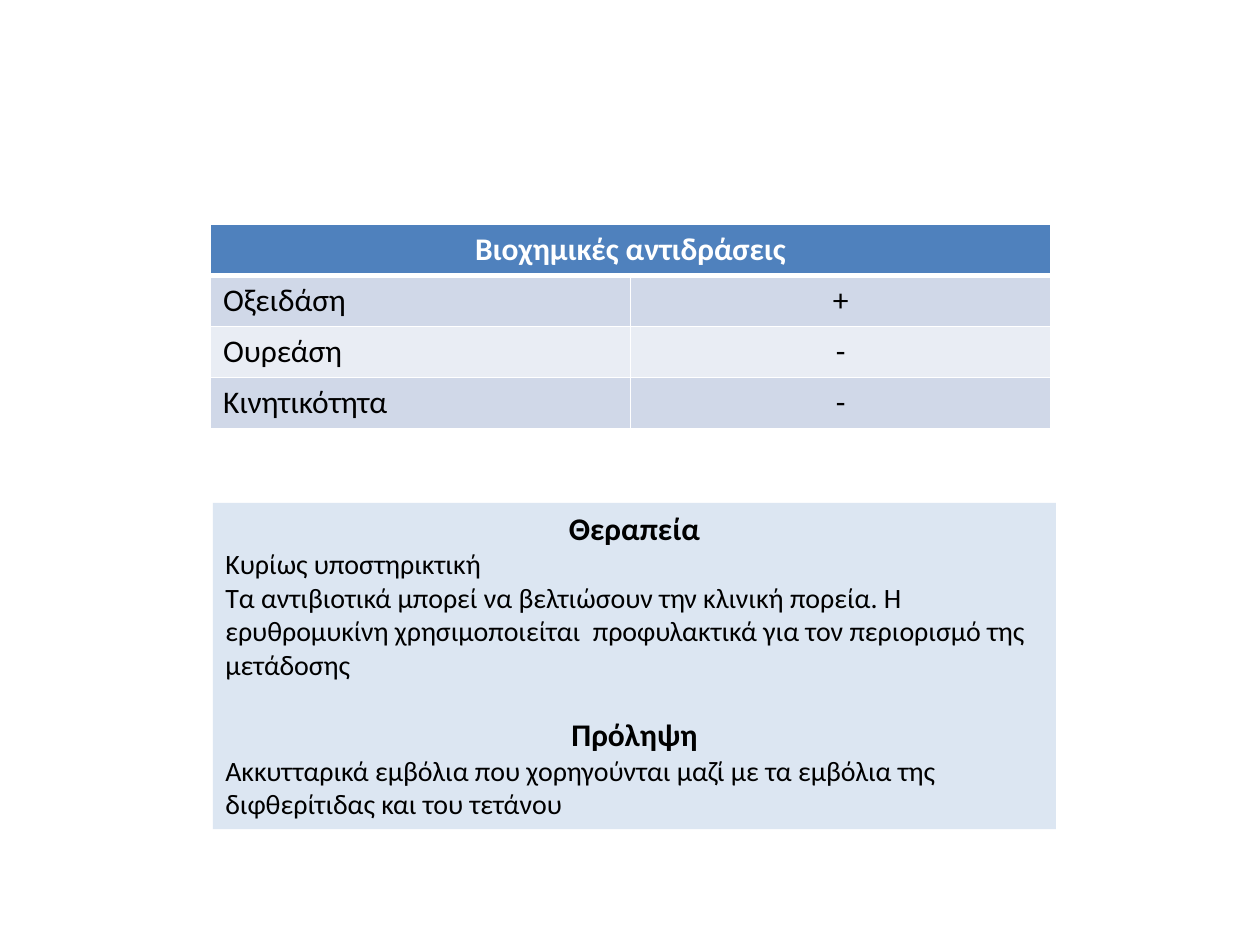
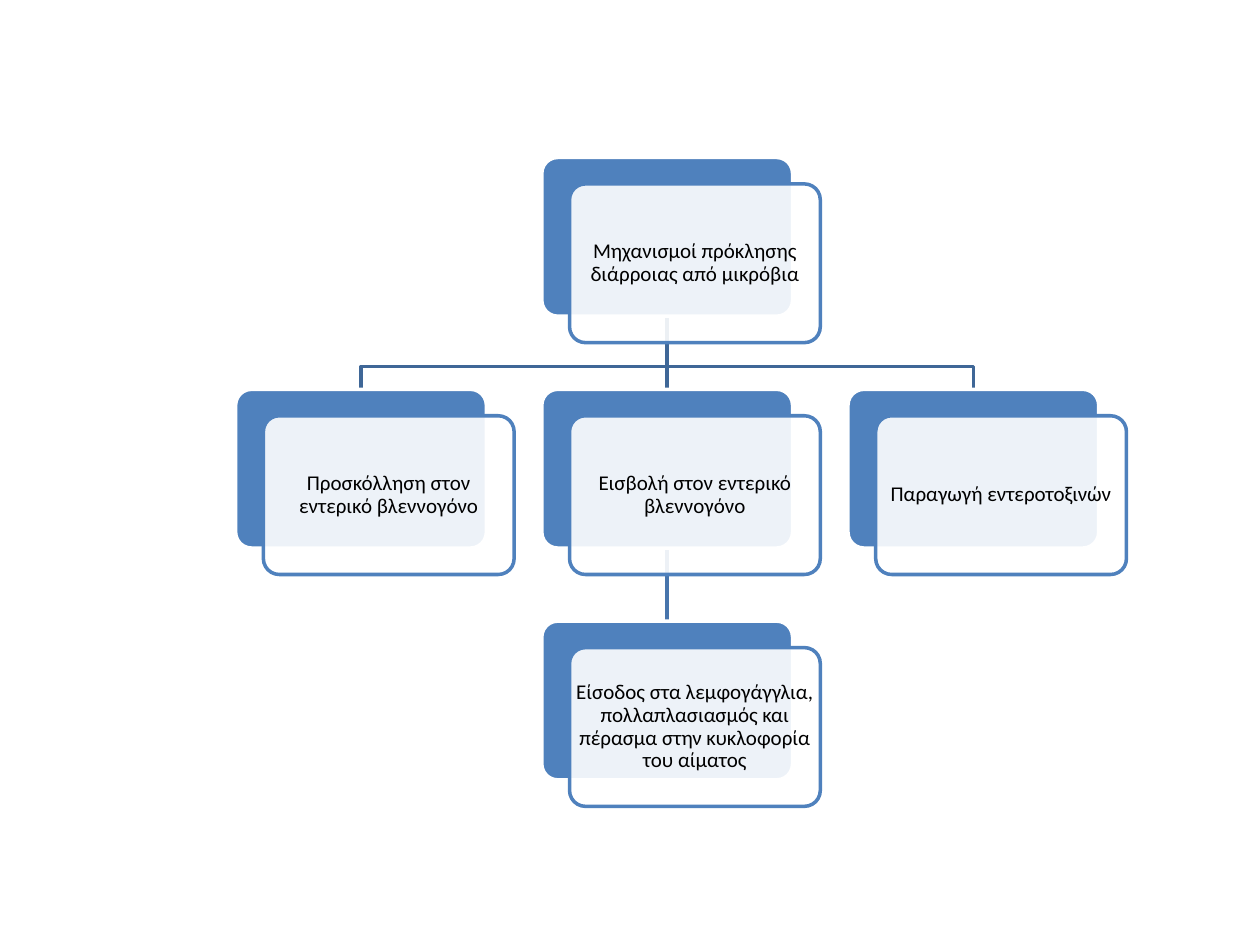
import pptx
import pptx.util
import pptx.dml.color
import pptx.enum.shapes
import pptx.enum.text
import pptx.oxml
import pptx.oxml.ns

Inches, Pt = pptx.util.Inches, pptx.util.Pt
RGB = pptx.dml.color.RGBColor.from_string
ALIGN = pptx.enum.text.PP_ALIGN
KIND = pptx.enum.shapes.MSO_SHAPE
NS = pptx.oxml.ns.nsdecls("a")

TESTS = {
    "title": "Βιοχημικές αντιδράσεις",
    "rows": [("Οξειδάση", "+"), ("Ουρεάση", "-"), ("Κινητικότητα", "-")],
}
CARE = [
    ("Θεραπεία", [
        "Κυρίως υποστηρικτική",
        "Τα αντιβιοτικά μπορεί να βελτιώσουν την κλινική πορεία. Η ερυθρομυκίνη "
        "χρησιμοποιείται  προφυλακτικά για τον περιορισμό της μετάδοσης",
    ]),
    ("Πρόληψη", [
        "Ακκυτταρικά εμβόλια που χορηγούνται μαζί με τα εμβόλια της "
        "διφθερίτιδας και του τετάνου",
    ]),
]
# name: (column, row, parent, text)
NODES = {
    "cause": (1, 0, None, "Μηχανισμοί πρόκλησης διάρροιας από μικρόβια"),
    "stick": (0, 1, "cause", "Προσκόλληση στον εντερικό βλεννογόνο"),
    "invade": (1, 1, "cause", "Εισβολή στον εντερικό βλεννογόνο"),
    "spread": (1, 2, "invade", "Είσοδος στα λεμφογάγγλια, πολλαπλασιασμός και "
                               "πέρασμα στην κυκλοφορία του αίματος"),
    "toxin": (2, 1, "cause", "Παραγωγή εντεροτοξινών"),
}


class Theme:
    font = "Calibri"
    head, body, label = 18, 16, 12
    ink, paper, blue = "000000", "FFFFFF", "4F81BD"
    bands = ("D0D8E8", "E9EDF4")
    panel = "DCE6F2"
    links = ("3F6797", "4875AC")  # by the parent's row
    stroke = 2


class Tree:
    left, top = 1.87, 1.25
    step_x, step_y = 2.43, 1.84
    wide, high = 1.99, 1.26
    shift_x, shift_y = 0.22, 0.21
    bend = 0.69  # share of the gap above the turn


def write(para, text, size, color=Theme.ink, bold=False, align=ALIGN.LEFT):
    para.text, para.alignment = text, align
    font = para.font
    font.name, font.size, font.bold = Theme.font, Pt(size), bold
    font.color.rgb = RGB(color)


def paint(part, color):
    part.fill.solid()
    part.fill.fore_color.rgb = RGB(color)


def edge(cell, low):
    """White cell borders; low is the width of the bottom one in points."""
    props = cell._tc.get_or_add_tcPr()
    for side, width in (("L", 1), ("R", 1), ("T", 1), ("B", low)):
        props.append(pptx.oxml.parse_xml(
            f'<a:ln{side} {NS} w="{Pt(width)}"><a:solidFill>'
            f'<a:srgbClr val="{Theme.paper}"/></a:solidFill></a:ln{side}>'))


def add_tests(slide):
    rows = [(TESTS["title"], "")] + TESTS["rows"]
    frame = slide.shapes.add_table(
        len(rows), 2, Inches(1.67), Inches(1.78), Inches(6.67), Inches(1.62))
    table = frame.table
    for r, row in enumerate(rows):
        for c, text in enumerate(row):
            cell = table.cell(r, c)
            edge(cell, 1 if r else 3)
            paint(cell, Theme.bands[(r - 1) % 2] if r else Theme.blue)
            write(cell.text_frame.paragraphs[0], text, Theme.head,
                  Theme.ink if r else Theme.paper, not r,
                  ALIGN.LEFT if r and not c else ALIGN.CENTER)
    table.cell(0, 0).merge(table.cell(0, 1))


def add_care(slide):
    box = slide.shapes.add_textbox(
        Inches(1.69), Inches(3.99), Inches(6.69), Inches(2.59))
    paint(box, Theme.panel)
    frame = box.text_frame
    frame.word_wrap = True
    for i, (head, lines) in enumerate(CARE):
        para = frame.add_paragraph() if i else frame.paragraphs[0]
        write(para, head, Theme.head, bold=True, align=ALIGN.CENTER)
        if i:
            para.space_before = Pt(19.5)
        for line in lines:
            write(frame.add_paragraph(), line, Theme.body)


def place(col, row):
    return Tree.left + col * Tree.step_x, Tree.top + row * Tree.step_y


def add_card(slide, x, y, fill, line):
    card = slide.shapes.add_shape(
        KIND.ROUNDED_RECTANGLE, Inches(x), Inches(y),
        Inches(Tree.wide), Inches(Tree.high))
    card.adjustments[0] = 0.1
    card.shadow.inherit = False
    paint(card, fill)
    card.line.color.rgb = RGB(line)
    card.line.width = Pt(Theme.stroke)
    return card


def add_node(slide, col, row, text):
    """Draw a blue card with a see-through label card; return the blue one."""
    x, y = place(col, row)
    back = add_card(slide, x, y, Theme.blue, Theme.paper)
    front = add_card(slide, x + Tree.shift_x, y + Tree.shift_y,
                     Theme.paper, Theme.blue)
    color = front.fill._xPr.find(".//" + pptx.oxml.ns.qn("a:srgbClr"))
    color.append(pptx.oxml.parse_xml(f'<a:alpha {NS} val="90000"/>'))
    frame = front.text_frame
    frame.word_wrap = True
    frame.vertical_anchor = pptx.enum.text.MSO_ANCHOR.MIDDLE
    frame.margin_left = frame.margin_right = Inches(0.01)
    frame.margin_top = frame.margin_bottom = Inches(0.01)
    para = frame.paragraphs[0]
    write(para, text, Theme.label, align=ALIGN.CENTER)
    para.line_spacing = 0.9
    return back


def add_link(slide, upper, lower, color):
    """Join two cards behind all others, with a bend if they are not in line."""
    x1, y1 = upper.left + upper.width // 2, upper.top + upper.height
    x2, y2 = lower.left + lower.width // 2, lower.top
    if x1 == x2:
        link = slide.shapes.add_connector(
            pptx.enum.shapes.MSO_CONNECTOR.STRAIGHT, x1, y1, x2, y2)
        link.begin_connect(upper, 2)
        link.end_connect(lower, 0)
        link.element.spPr.append(pptx.oxml.parse_xml(f"<a:effectLst {NS}/>"))
    else:
        turn = y1 + round((y2 - y1) * Tree.bend)
        path = slide.shapes.build_freeform(x1, y1)
        path.add_line_segments([(x1, turn), (x2, turn), (x2, y2)], close=False)
        link = path.convert_to_shape()
        link.fill.background()
        link.shadow.inherit = False
    link.line.color.rgb = RGB(color)
    link.line.width = Pt(Theme.stroke)
    slide.shapes.element.insert(2, link.element)


def add_tree(slide):
    cards = {name: add_node(slide, col, row, text)
             for name, (col, row, _, text) in NODES.items()}
    for name, (_, row, parent, _) in NODES.items():
        if parent:
            add_link(slide, cards[parent], cards[name], Theme.links[row - 1])


def main():
    deck = pptx.Presentation()
    deck.slide_width, deck.slide_height = Inches(10), Inches(7.5)
    for parts in ((add_tests, add_care), (add_tree,)):
        slide = deck.slides.add_slide(deck.slide_layouts[6])
        for part in parts:
            part(slide)
    deck.save("out.pptx")


if __name__ == "__main__":
    main()
